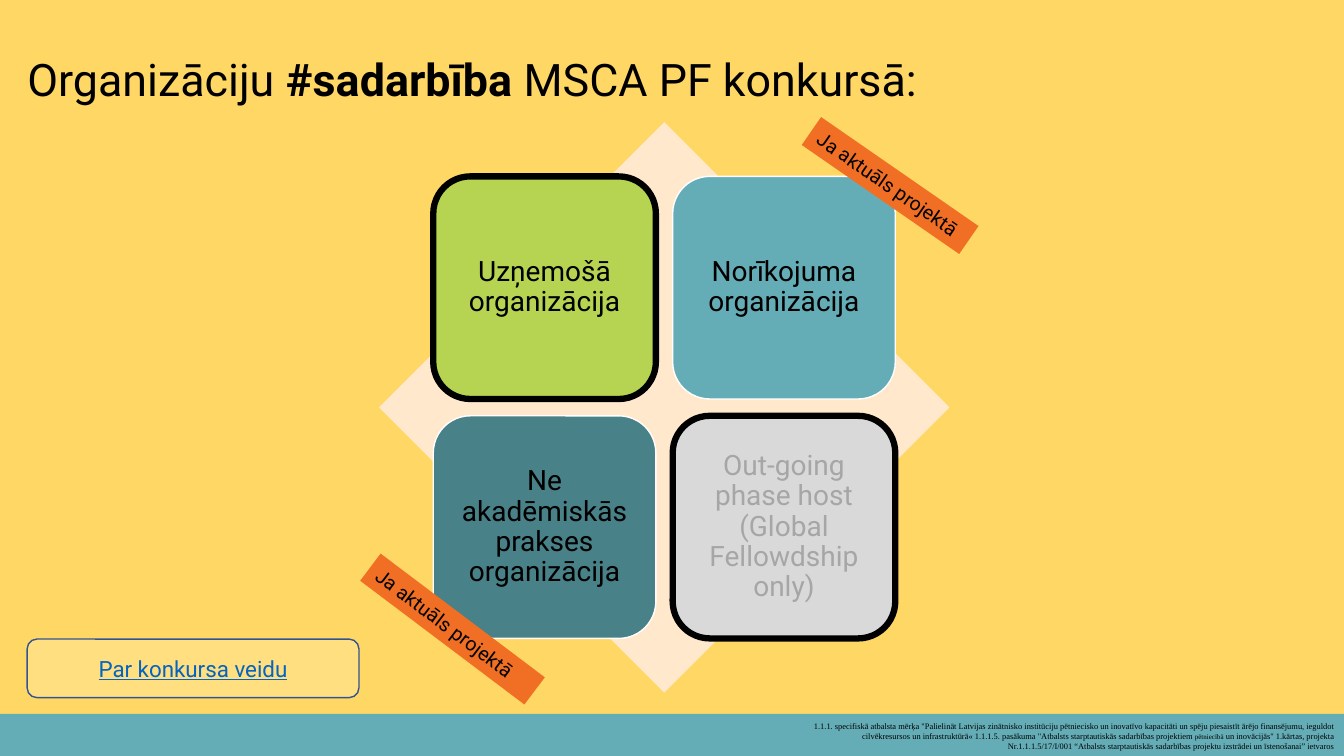
from dataclasses import dataclass

from pptx import Presentation
from pptx.dml.color import RGBColor
from pptx.enum.shapes import MSO_SHAPE as Geo
from pptx.enum.text import MSO_ANCHOR as Anchor, MSO_AUTO_SIZE as AutoSize, PP_ALIGN as Align
from pptx.shapes.autoshape import Shape
from pptx.slide import Slide
from pptx.util import Pt


@dataclass(frozen=True)
class Theme:
    font: str = "Roboto"
    footer_font: str = "Times New Roman"
    background: str = "FFD764"
    teal: str = "65ADB6"
    dark_teal: str = "488187"
    green: str = "B6D452"
    grey: str = "D9D9D9"
    muted: str = "A6A6A6"
    diamond: str = "FFE8CC"
    tag: str = "F16F24"
    button: str = "FFDF7F"
    button_line: str = "325491"
    link: str = "0563C1"
    black: str = "000000"
    white: str = "FFFFFF"
    title_size: float = 32
    tile_size: float = 20
    button_size: float = 16
    tag_size: float = 14
    footer_size: float = 6
    footer_small: float = 5


@dataclass(frozen=True)
class Box:
    left: float
    top: float
    width: float
    height: float

    def in_points(self) -> tuple[Pt, Pt, Pt, Pt]:
        return Pt(self.left), Pt(self.top), Pt(self.width), Pt(self.height)


@dataclass(frozen=True)
class Run:
    text: str
    bold: bool = False
    size: float | None = None


@dataclass(frozen=True)
class Tile:
    text: str
    column: int
    row: int
    fill: str
    line: str
    line_width: float
    color: str


@dataclass(frozen=True)
class Tag:
    box: Box
    angle: float


THEME = Theme()
CENTER_X, CENTER_Y = 474.5, 291
DIAMOND_SIZE = 407.5
TILE_SIZE, TILE_GAP = 159, 12
TAG_TEXT = "Ja aktuāls projektā"

TILES = [
    Tile("Uzņemošā organizācija", 0, 0, THEME.green, THEME.black, 4.5, THEME.black),
    Tile("Norīkojuma organizācija", 1, 0, THEME.teal, THEME.white, 1, THEME.black),
    Tile("Ne akadēmiskās prakses organizācija", 0, 1, THEME.dark_teal, THEME.white, 1, THEME.black),
    Tile("Out-going phase host (Global Fellowdship only)", 1, 1, THEME.grey, THEME.black, 4.5,
         THEME.muted),
]
TAGS = [
    Tag(Box(567.4, 120.4, 136.8, 24.3), 34.7),
    Tag(Box(249.8, 437.2, 146.9, 24.3), 37),
]
TITLE = [Run("Organizāciju "), Run("#sadarbība ", bold=True), Run("MSCA PF konkursā:")]
FOOTER = [
    Run('1.1.1. specifiskā atbalsta mērķa "Palielināt Latvijas zinātnisko institūciju pētniecisko '
        "un inovatīvo kapacitāti un spēju piesaistīt ārējo finansējumu, ieguldot cilvēkresursos "
        'un infrastruktūrā« 1.1.1.5. pasākuma "Atbalsts starptautiskās sadarbības projektiem '),
    Run("pētniecībā", size=THEME.footer_small),
    Run(' un inovācijās" 1.kārtas, projekta Nr.1.1.1.5/17/I/001 “Atbalsts starptautiskās '
        "sadarbības projektu izstrādei un īstenošanai” ietvaros"),
]


def rgb(value: str) -> RGBColor:
    return RGBColor.from_string(value)


def write(sp: Shape, runs: list[Run], *, size: float, color: str = THEME.black,
          font: str = THEME.font, align: Align = Align.LEFT, anchor: Anchor = Anchor.TOP,
          spacing: float = 1.0, underline: bool = False, inset: float | None = None) -> None:
    """Fill a shape with one formatted paragraph."""
    tf = sp.text_frame
    tf.word_wrap, tf.auto_size, tf.vertical_anchor = True, AutoSize.NONE, anchor
    if inset is not None:
        tf.margin_left = tf.margin_right = tf.margin_top = tf.margin_bottom = Pt(inset)
    p = tf.paragraphs[0]
    p.alignment, p.line_spacing = align, spacing
    for run in runs:
        r = p.add_run()
        r.text = run.text
        r.font.name, r.font.size = font, Pt(run.size or size)
        r.font.bold, r.font.underline = run.bold, underline
        r.font.color.rgb = rgb(color)


def add_shape(s: Slide, geo: Geo, box: Box, fill: str, line: str | None = None,
              line_width: float = 1) -> Shape:
    sp = s.shapes.add_shape(geo, *box.in_points())
    sp.shadow.inherit = False
    sp.fill.solid()
    sp.fill.fore_color.rgb = rgb(fill)
    if line:
        sp.line.color.rgb, sp.line.width = rgb(line), Pt(line_width)
    else:
        sp.line.fill.background()
    return sp


def add_tile(s: Slide, tile: Tile) -> None:
    pitch = TILE_SIZE + TILE_GAP
    left = CENTER_X - TILE_SIZE - TILE_GAP / 2 + tile.column * pitch
    top = CENTER_Y - TILE_SIZE - TILE_GAP / 2 + tile.row * pitch
    sp = add_shape(s, Geo.ROUNDED_RECTANGLE, Box(left, top, TILE_SIZE, TILE_SIZE),
                   tile.fill, tile.line, tile.line_width)
    write(sp, [Run(tile.text)], size=THEME.tile_size, color=tile.color, align=Align.CENTER,
          anchor=Anchor.MIDDLE, spacing=0.9, inset=6)


def add_tag(s: Slide, tag: Tag) -> None:
    sp = add_shape(s, Geo.RECTANGLE, tag.box, THEME.tag)
    sp.rotation = tag.angle
    write(sp, [Run(TAG_TEXT)], size=THEME.tag_size)


def add_footer(s: Slide) -> None:
    add_shape(s, Geo.RECTANGLE, Box(0, 510, 960, 30), THEME.teal)
    sp = s.shapes.add_textbox(*Box(567.4, 511.2, 392.6, 28.8).in_points())
    write(sp, FOOTER, size=THEME.footer_size, font=THEME.footer_font, align=Align.RIGHT)


def add_title(s: Slide) -> None:
    sp = s.shapes.title
    sp.left, sp.top, sp.width, sp.height = Box(12.4, 16.6, 687, 62.6).in_points()
    write(sp, TITLE, size=THEME.title_size, anchor=Anchor.BOTTOM, spacing=0.9)


def add_button(s: Slide) -> None:
    sp = add_shape(s, Geo.ROUNDED_RECTANGLE, Box(19.4, 456.5, 237, 41.8),
                   THEME.button, THEME.button_line)
    write(sp, [Run("Par konkursa veidu")], size=THEME.button_size, color=THEME.link,
          align=Align.CENTER, anchor=Anchor.MIDDLE, underline=True)


def main() -> None:
    prs = Presentation()
    prs.slide_width, prs.slide_height = Pt(960), Pt(540)
    s = prs.slides.add_slide(prs.slide_layouts[5])
    s.background.fill.solid()
    s.background.fill.fore_color.rgb = rgb(THEME.background)

    add_footer(s)
    add_title(s)
    add_button(s)
    half = DIAMOND_SIZE / 2
    add_shape(s, Geo.DIAMOND, Box(CENTER_X - half, CENTER_Y - half, DIAMOND_SIZE, DIAMOND_SIZE),
              THEME.diamond)
    for tile in TILES:
        add_tile(s, tile)
    for tag in TAGS:
        add_tag(s, tag)
    prs.save("out.pptx")


if __name__ == "__main__":
    main()
